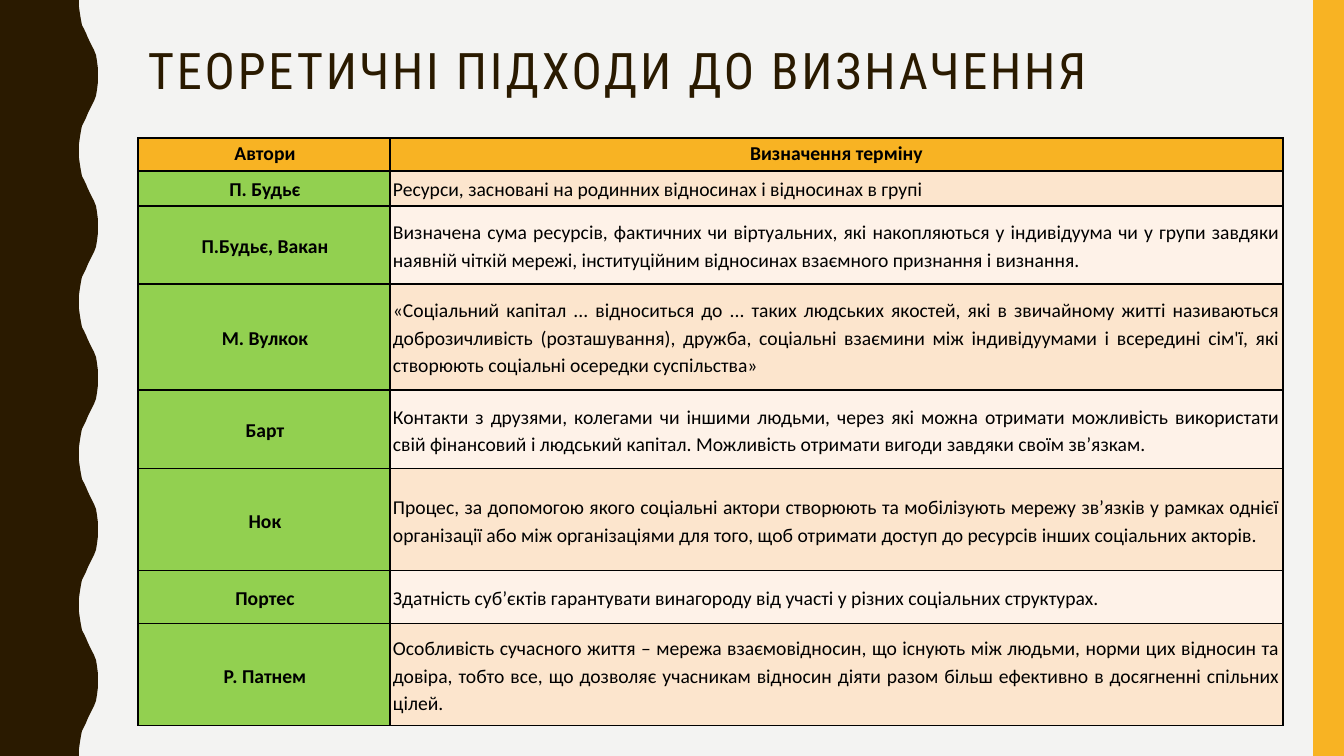
from lxml.etree import SubElement
from pptx import Presentation
from pptx.dml.color import RGBColor
from pptx.enum.shapes import MSO_SHAPE
from pptx.enum.text import MSO_ANCHOR, PP_ALIGN
from pptx.oxml.ns import qn
from pptx.util import Emu, Pt

SCALE = 914400 / 100.8
WIDTH, HEIGHT = 1344, 756

BACKGROUND = RGBColor(0xF3, 0xF3, 0xF2)
BROWN = RGBColor(0x2A, 0x1A, 0x00)
AMBER = RGBColor(0xF8, 0xB3, 0x23)
GREEN = RGBColor(0x92, 0xD0, 0x50)
PEACH = RGBColor(0xFC, 0xE5, 0xCD)
CREAM = RGBColor(0xFE, 0xF2, 0xE8)
BLACK = RGBColor(0x00, 0x00, 0x00)


def px(length):
    return Emu(round(length * SCALE))


def add_borders(cell):
    properties = cell._tc.get_or_add_tcPr()
    for position, side in enumerate(("lnL", "lnR", "lnT", "lnB")):
        line = properties.makeelement(qn(f"a:{side}"), {"w": str(Pt(1))})
        fill = SubElement(line, qn("a:solidFill"))
        SubElement(fill, qn("a:srgbClr"), val=str(BLACK))
        properties.insert(position, line)


presentation = Presentation()
presentation.slide_width = px(WIDTH)
presentation.slide_height = px(HEIGHT)
slide = presentation.slides.add_slide(presentation.slide_layouts[6])
slide.background.fill.solid()
slide.background.fill.fore_color.rgb = BACKGROUND

# Wavy left band: half a wave, mirrored and repeated down the slide
WAVES = 5
period = HEIGHT / WAVES
half_wave = [(79, 0), (79, 7), (80, 14), (81, 20), (82, 25), (84, 29), (86, 33),
             (88, 38), (90, 42), (92, 46), (94, 50), (96, 55), (97, 61), (98, 69)]
crest = [(98, period / 2)]
wave = half_wave + crest + [(x, period - y) for x, y in reversed(half_wave)]
edge = [(x, y + number * period) for number in range(WAVES) for x, y in wave]
builder = slide.shapes.build_freeform(0, 0, scale=SCALE)
builder.add_line_segments(edge + [(0, HEIGHT)], close=True)
band = builder.convert_to_shape()

# Right stripe
stripe = slide.shapes.add_shape(MSO_SHAPE.RECTANGLE, px(1313), 0, px(31), px(HEIGHT))
for shape, color in ((band, BROWN), (stripe, AMBER)):
    shape.shadow.inherit = False
    shape.fill.solid()
    shape.fill.fore_color.rgb = color
    shape.line.fill.background()

# Title
title = slide.shapes.add_textbox(px(138), px(42), px(1122), px(63))
title.text_frame.word_wrap = True
title.text_frame.vertical_anchor = MSO_ANCHOR.MIDDLE
paragraph = title.text_frame.paragraphs[0]
paragraph.line_spacing = 0.9
run = paragraph.add_run()
run.text = "ТЕОРЕТИЧНІ ПІДХОДИ ДО ВИЗНАЧЕННЯ"
run.font.name = "Roboto Condensed"
run.font.size = Pt(36)
run.font.color.rgb = BROWN
run._r.get_or_add_rPr().set("spc", "200")

# Table of definitions: row height, author, definition
ROWS = [
    (33, "Автори", "Визначення терміну"),
    (35, "П. Будьє", "Ресурси, засновані на родинних відносинах і відносинах в групі"),
    (78, "П.Будьє, Вакан",
     "Визначена сума ресурсів, фактичних чи віртуальних, які накопляються у індивідуума "
     "чи у групи завдяки наявній чіткій мережі, інституційним відносинах взаємного "
     "признання і визнання."),
    (106, "М. Вулкок",
     "«Соціальний капітал ... відноситься до ... таких людських якостей, які в звичайному "
     "житті називаються доброзичливість (розташування), дружба, соціальні взаємини між "
     "індивідуумами і всередині сім'ї, які створюють соціальні осередки суспільства»"),
    (79, "Барт",
     "Контакти з друзями, колегами чи іншими людьми, через які можна отримати можливість "
     "використати свій фінансовий і людський капітал. Можливість отримати вигоди завдяки "
     "своїм зв’язкам."),
    (102, "Нок",
     "Процес, за допомогою якого соціальні актори створюють та мобілізують мережу зв’язків "
     "у рамках однієї організації або між організаціями для того, щоб отримати доступ до "
     "ресурсів інших соціальних акторів."),
    (53, "Портес",
     "Здатність суб’єктів гарантувати винагороду від участі у різних соціальних структурах."),
    (102, "Р. Патнем",
     "Особливість сучасного життя – мережа взаємовідносин, що існують між людьми, норми цих "
     "відносин та довіра, тобто все, що дозволяє учасникам відносин діяти разом більш "
     "ефективно в досягненні спільних цілей."),
]
COLUMNS = (252, 893)
table_height = sum(height for height, *_ in ROWS)
table = slide.shapes.add_table(len(ROWS), len(COLUMNS), px(138), px(138),
                               px(sum(COLUMNS)), px(table_height)).table
for column, width in zip(table.columns, COLUMNS):
    column.width = px(width)

for row_index, (height, *texts) in enumerate(ROWS):
    table.rows[row_index].height = px(height)
    is_header = row_index == 0
    body_color = PEACH if row_index % 2 else CREAM
    for column_index, text in enumerate(texts):
        is_author = column_index == 0
        cell = table.cell(row_index, column_index)
        cell.text = text
        cell.margin_left = cell.margin_right = px(3)
        cell.margin_top = cell.margin_bottom = 0
        cell.vertical_anchor = MSO_ANCHOR.TOP if is_header else MSO_ANCHOR.MIDDLE
        cell.fill.solid()
        cell.fill.fore_color.rgb = AMBER if is_header else GREEN if is_author else body_color
        add_borders(cell)
        paragraph = cell.text_frame.paragraphs[0]
        paragraph.alignment = PP_ALIGN.CENTER if is_header or is_author else PP_ALIGN.JUSTIFY
        paragraph.line_spacing = 1.15
        if is_author:
            paragraph._p.get_or_add_pPr().set("indent", str(px(2)))
        paragraph.font.name = "Calibri"
        paragraph.font.size = Pt(14)
        paragraph.font.bold = is_header or is_author
        paragraph.font.color.rgb = BLACK

presentation.save("out.pptx")
